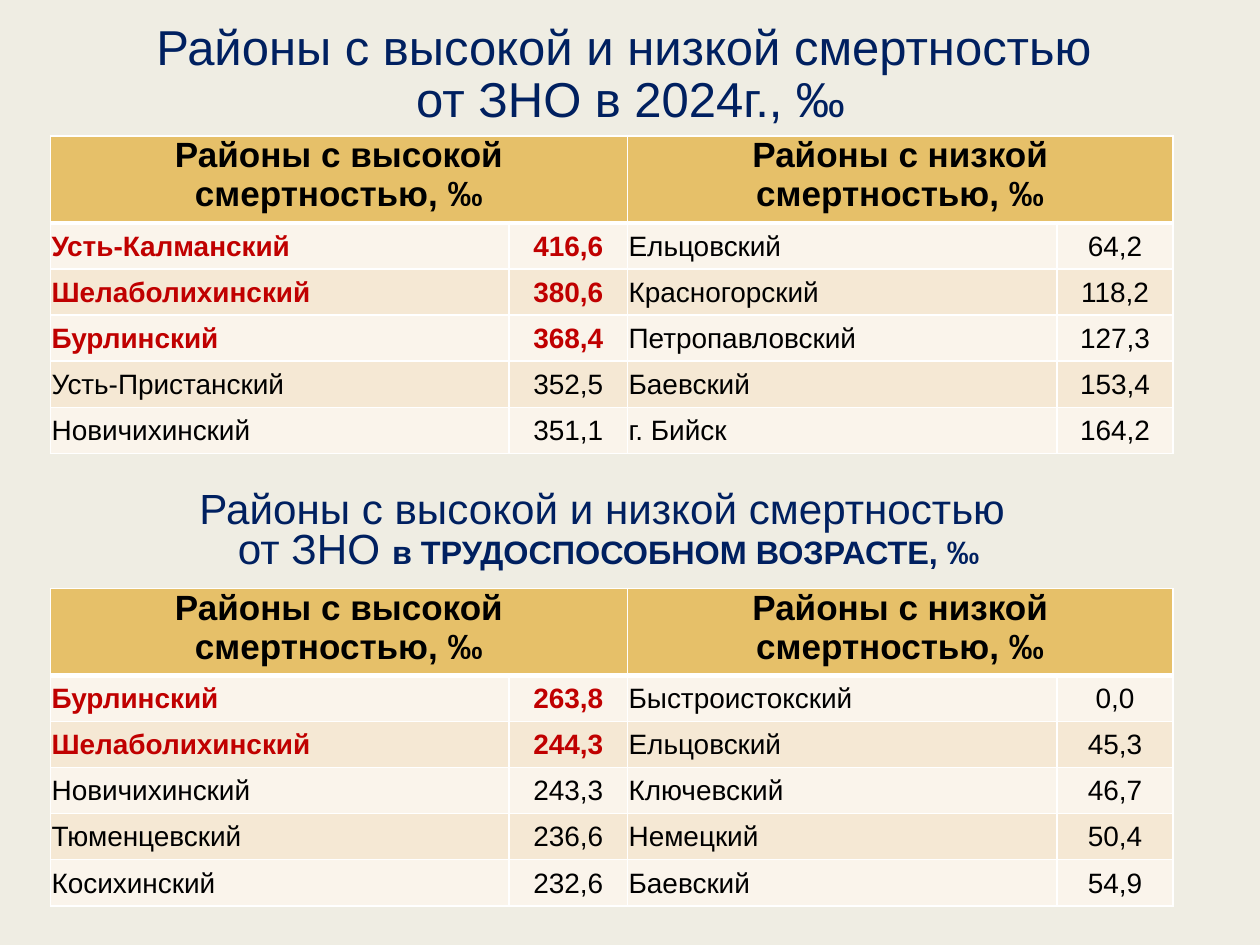
from lxml.etree import SubElement
from pptx import Presentation
from pptx.dml.color import RGBColor
from pptx.enum.text import MSO_ANCHOR, PP_ALIGN
from pptx.oxml.ns import qn
from pptx.util import Inches, Pt

NAVY, RED, BLACK, WHITE = "002060", "C00000", "000000", "FFFFFF"
GOLD, CREAM, SAND, PAPER = "E6C069", "FAF4EB", "F5E8D4", "EFEDE3"
COLUMNS = [3.64, 0.94, 3.41, 0.92]
HEADER_HEIGHT, ROW_HEIGHT = 0.69, 0.366
HEADERS = ["Районы с высокой смертностью, ‰", "", "Районы с низкой смертностью, ‰", ""]
HEADING = "Районы с высокой и низкой смертностью \vот ЗНО "

headings = [
    (0.24, 0.13, 9.53, 0.94, 0.89, [(HEADING + "в 2024г., ‰", 28, False)]),
    (0.38, 3.83, 8.9, 0.8, 0.79,
     [(HEADING, 24.1, False), ("в ТРУДОСПОСОБНОМ ВОЗРАСТЕ, ‰", 18.5, True)]),
]
tables = [
    (1.08, 3, [
        ("Усть-Калманский", "416,6", "Ельцовский", "64,2"),
        ("Шелаболихинский", "380,6", "Красногорский", "118,2"),
        ("Бурлинский", "368,4", "Петропавловский", "127,3"),
        ("Усть-Пристанский", "352,5", "Баевский", "153,4"),
        ("Новичихинский", "351,1", "г. Бийск", "164,2"),
    ]),
    (4.67, 2, [
        ("Бурлинский", "263,8", "Быстроистокский", "0,0"),
        ("Шелаболихинский", "244,3", "Ельцовский", "45,3"),
        ("Новичихинский", "243,3", "Ключевский", "46,7"),
        ("Тюменцевский", "236,6", "Немецкий", "50,4"),
        ("Косихинский", "232,6", "Баевский", "54,9"),
    ]),
]


def color(value):
    return RGBColor.from_string(value)


def style_font(font, size, bold, shade):
    font.name = "Arial"
    font.size = Pt(size)
    font.bold = bold
    font.color.rgb = color(shade)


deck = Presentation()
deck.slide_width, deck.slide_height = Inches(10), Inches(7.5)
page = deck.slides.add_slide(deck.slide_layouts[6])
page.background.fill.solid()
page.background.fill.fore_color.rgb = color(PAPER)

for left, top, width, height, spacing, spans in headings:
    box = page.shapes.add_textbox(Inches(left), Inches(top), Inches(width), Inches(height))
    box.text_frame.word_wrap = True
    box.text_frame.vertical_anchor = MSO_ANCHOR.MIDDLE
    para = box.text_frame.paragraphs[0]
    para.alignment = PP_ALIGN.CENTER
    para.line_spacing = spacing
    for text, size, bold in spans:
        for index, line in enumerate(text.split("\v")):
            if index:
                para.add_line_break()
            span = para.add_run()
            span.text = line
            style_font(span.font, size, bold, NAVY)

for top, highlighted, districts in tables:
    rows = [HEADERS, *districts]
    height = HEADER_HEIGHT + ROW_HEIGHT * len(districts)
    table = page.shapes.add_table(
        len(rows), len(COLUMNS), Inches(0.4), Inches(top), Inches(sum(COLUMNS)), Inches(height)
    ).table
    for column, width in zip(table.columns, COLUMNS):
        column.width = Inches(width)
    for row_index, values in enumerate(rows):
        header = row_index == 0
        table.rows[row_index].height = Inches(HEADER_HEIGHT if header else ROW_HEIGHT)
        for column_index, value in enumerate(values):
            cell = table.cell(row_index, column_index)
            cell.text_frame.text = value
            cell.margin_left = cell.margin_right = Inches(0.04 if header else 0.01)
            cell.margin_top = Inches(0 if header else 0.01)
            cell.margin_bottom = 0
            cell.vertical_anchor = MSO_ANCHOR.TOP if header else MSO_ANCHOR.MIDDLE
            para = cell.text_frame.paragraphs[0]
            para.alignment = PP_ALIGN.CENTER if header or column_index % 2 else PP_ALIGN.LEFT
            marked = 0 < row_index <= highlighted and column_index < 2
            for span in para.runs:
                style_font(span.font, 20 if header else 16, header or marked, RED if marked else BLACK)
            properties = cell._tc.get_or_add_tcPr()
            for side in ("lnL", "lnR", "lnT", "lnB"):
                thick = (side, row_index) in (("lnB", 0), ("lnT", 1))
                border = SubElement(properties, qn(f"a:{side}"), w=str(Pt(3 if thick else 1)))
                SubElement(SubElement(border, qn("a:solidFill")), qn("a:srgbClr"), val=WHITE)
            cell.fill.solid()
            cell.fill.fore_color.rgb = color(GOLD if header else CREAM if row_index % 2 else SAND)
    for column_index in (0, 2):
        table.cell(0, column_index).merge(table.cell(0, column_index + 1))

deck.save("out.pptx")
